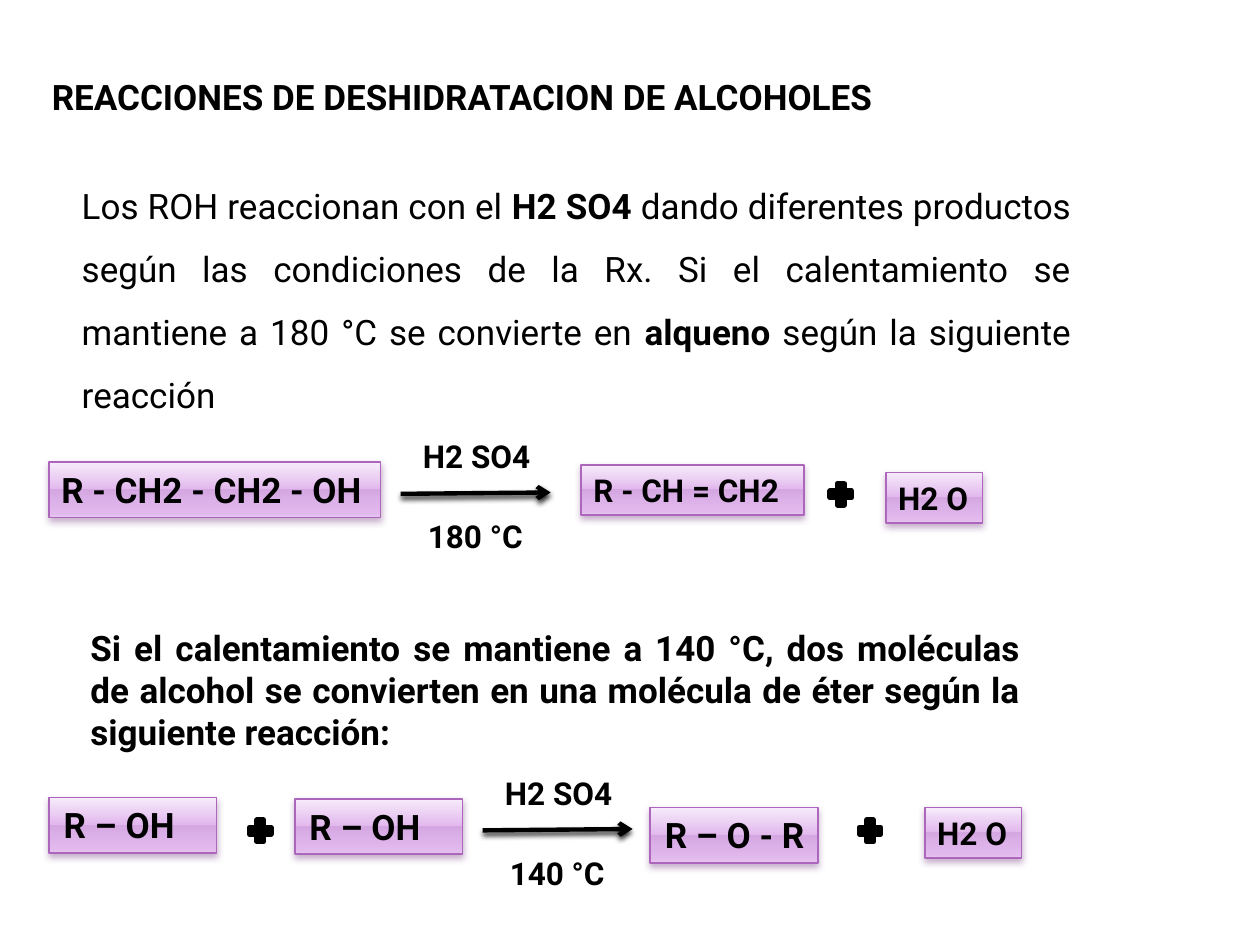
from lxml import etree
from pptx import Presentation
from pptx.dml.color import RGBColor
from pptx.enum import shapes, text
from pptx.oxml import parse_xml
from pptx.oxml.ns import nsdecls, qn
from pptx.util import Pt

FONT = "Roboto"
BLACK = RGBColor(0x00, 0x00, 0x00)
PURPLE = RGBColor(0xAC, 0x66, 0xBB)
SHADE = RGBColor(0x6E, 0x30, 0x7B)
STOPS = [
    (0, RGBColor(0xF7, 0xEB, 0xFB)),
    (49, RGBColor(0xE2, 0xB9, 0xED)),
    (49, RGBColor(0xD5, 0xA7, 0xE2)),
    (92, RGBColor(0xE2, 0xB9, 0xED)),
    (100, RGBColor(0xE6, 0xC6, 0xEF)),
]


def set_text(sp, runs, size, wrap=True, align=text.PP_ALIGN.LEFT, spacing=None):
    """Fill a shape with one paragraph of (text, bold) runs."""
    tf = sp.text_frame
    tf.word_wrap = wrap
    tf.vertical_anchor = text.MSO_ANCHOR.TOP
    p = tf.paragraphs[0]
    p.alignment = align
    p.font.name, p.font.size, p.font.color.rgb = FONT, Pt(size), BLACK
    if spacing:
        p.line_spacing = spacing
    for words, bold in runs:
        r = p.add_run()
        r.text, r.font.bold = words, bold


def add_text(s, box, runs, size, **layout):
    sp = s.shapes.add_textbox(*map(Pt, box))
    set_text(sp, runs, size, **layout)


def add_shadow(spPr, color, alpha, blur):
    """Put a soft shadow, 2 pt below, on a shape or line."""
    for old in spPr.findall(qn("a:effectLst")):
        spPr.remove(old)
    spPr.append(parse_xml(
        f'<a:effectLst {nsdecls("a")}><a:outerShdw blurRad="{Pt(blur)}" dist="{Pt(2)}" '
        f'dir="5400000" rotWithShape="0"><a:srgbClr val="{color}">'
        f'<a:alpha val="{alpha * 1000}"/></a:srgbClr></a:outerShdw></a:effectLst>'))


def add_molecule(s, box, formula, size, inset=7.2):
    """Glossy purple box holding a formula."""
    sp = s.shapes.add_shape(shapes.MSO_SHAPE.RECTANGLE, *map(Pt, box))
    sp.fill.gradient()
    sp.fill.gradient_angle = 270
    stops = sp._element.spPr.find(qn("a:gradFill")).find(qn("a:gsLst"))
    for old in list(stops):
        stops.remove(old)
    for pos, color in STOPS:
        gs = etree.SubElement(stops, qn("a:gs"), pos=str(pos * 1000))
        etree.SubElement(gs, qn("a:srgbClr"), val=str(color))
    sp.line.color.rgb, sp.line.width = PURPLE, Pt(0.9)
    add_shadow(sp._element.spPr, SHADE, 38, 4)
    set_text(sp, [(formula, True)], size, wrap=False)
    sp.text_frame.margin_left = Pt(inset)


def add_plus(s, x, y):
    sp = s.shapes.add_shape(shapes.MSO_SHAPE.MATH_PLUS, Pt(x), Pt(y), Pt(16.6), Pt(16.6))
    sp.shadow.inherit = False
    sp.fill.solid()
    sp.fill.fore_color.rgb = BLACK
    sp.line.color.rgb, sp.line.width = BLACK, Pt(3.15)


def add_reaction_arrow(s, x, y, temperature):
    """Arrow with the catalyst above and the temperature below."""
    line = s.shapes.add_connector(shapes.MSO_CONNECTOR.STRAIGHT,
                                  Pt(x), Pt(y + 36), Pt(x + 85.7), Pt(y + 35.2))
    line.line.color.rgb, line.line.width = BLACK, Pt(2.5)
    etree.SubElement(line.line._get_or_add_ln(), qn("a:tailEnd"), type="arrow")
    add_shadow(line._element.spPr, BLACK, 83, 3.1)
    add_text(s, (x + 5.6, y, 75.6, 28.8), [("H2 SO4", True)], 18, wrap=False)
    add_text(s, (x + 8.4, y + 46, 73.4, 28.8), [(temperature, True)], 18, wrap=False)


def add_reaction(s, x, y, molecules, pluses, arrow_x, temperature):
    """One reaction row, placed from its top left corner."""
    for dx, dy, w, h, formula, size, inset in molecules:
        add_molecule(s, (x + dx, y + dy, w, h), formula, size, inset)
    for dx in pluses:
        add_plus(s, x + dx, y + 28)
    add_reaction_arrow(s, x + arrow_x, y, temperature)


def main():
    prs = Presentation()
    prs.slide_width, prs.slide_height = Pt(720), Pt(540)
    s = prs.slides.add_slide(prs.slide_layouts[6])

    # Title
    add_text(s, (22.5, 39.6, 495.4, 31.7),
             [("REACCIONES DE DESHIDRATACION DE ALCOHOLES", True)], 20)

    # Alkene: explanation and reaction
    add_text(s, (39.6, 90, 579.6, 152.6), [
        ("Los ROH reaccionan con el ", False),
        ("H2 SO4 ", True),
        ("dando diferentes productos según las condiciones de la Rx. "
         "Si el calentamiento se mantiene a 180 °C se convierte en ", False),
        ("alqueno", True),
        (" según la siguiente reacción", False),
    ], 20, align=text.PP_ALIGN.JUSTIFY, spacing=1.5)
    add_reaction(s, 28, 246.2, [
        (0, 18, 189.4, 31.7, "R - CH2 - CH2 - OH", 20, 7.2),
        (304, 19.4, 127.4, 28.8, "R - CH = CH2", 18, 7.2),
        (478.2, 23.8, 55.4, 28.8, "H2 O", 18, 7.2),
    ], [444.2], 201, "180 °C")

    # Ether: explanation and reaction
    add_text(s, (44.6, 354.2, 545.8, 80),
             [("Si el calentamiento se mantiene a 140 °C, dos moléculas de alcohol se "
               "convierten en una molécula de éter según la siguiente reacción:", True)],
             20, align=text.PP_ALIGN.JUSTIFY)
    add_reaction(s, 28, 438.5, [
        (0, 17.2, 95.8, 31.7, "R – OH", 20, 8.4),
        (140.5, 18, 95.8, 31.7, "R – OH", 20, 8.4),
        (343.5, 23, 95.8, 31.7, "R – O - R", 20, 8.4),
        (500.5, 23, 55.4, 28.8, "H2 O", 18, 7.2),
    ], [112.4, 460.9], 247.8, "140 °C")

    prs.save("out.pptx")


if __name__ == "__main__":
    main()
